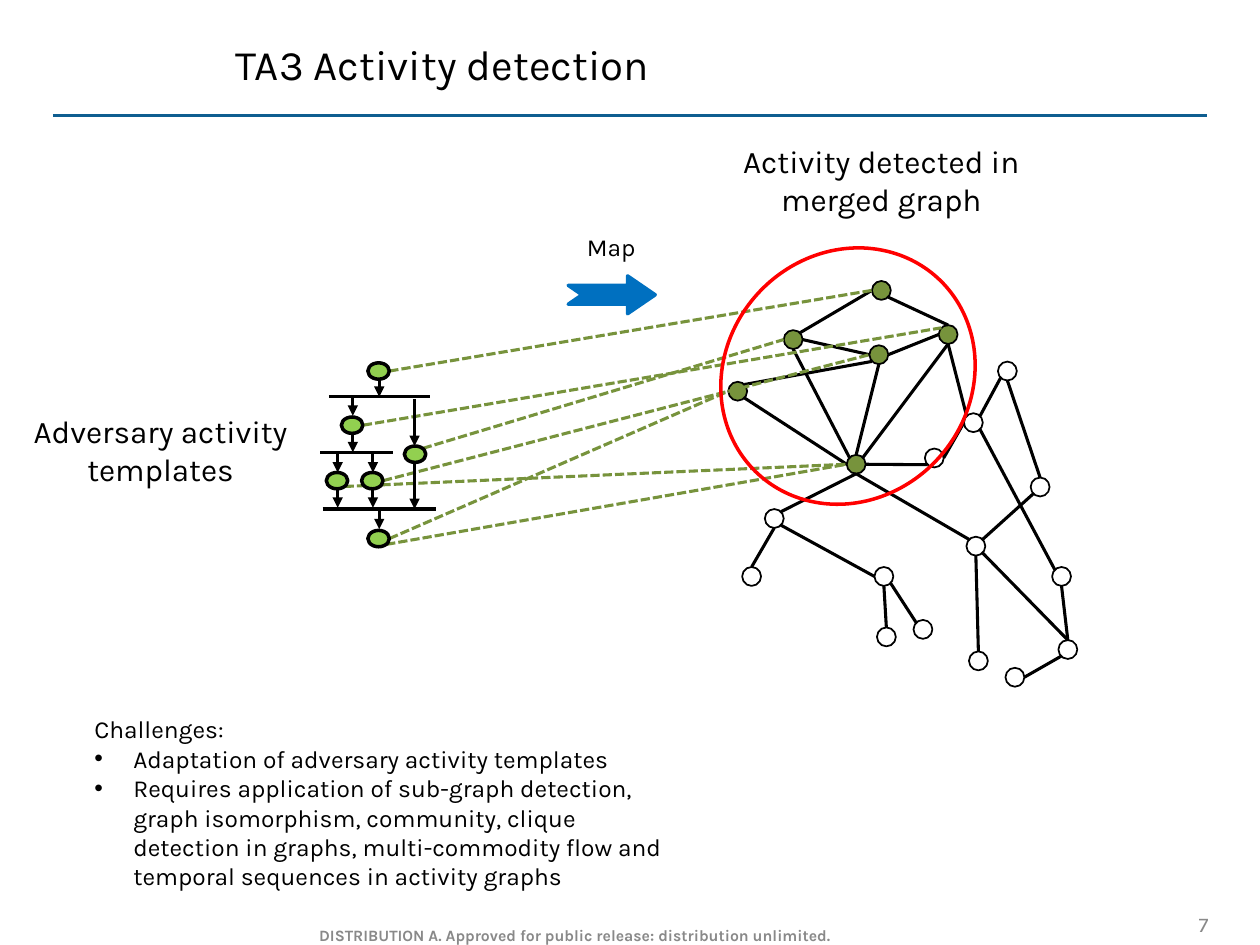
import lxml.etree
import pptx
import pptx.util
from pptx.dml.color import RGBColor
from pptx.enum.dml import MSO_LINE
from pptx.enum.shapes import MSO_CONNECTOR, MSO_SHAPE
from pptx.enum.text import MSO_ANCHOR, PP_ALIGN
from pptx.oxml.ns import qn
from pptx.util import Inches

FONT = "Karla"
BLACK, WHITE, GRAY = "000000", "FFFFFF", "898989"
OLIVE, LIME, RED, BLUE, NAVY = "77933C", "92D050", "FF0000", "0070C0", "0F5E90"

NODE_SIZE = (0.15, 0.15)
STEP_SIZE = (0.17, 0.13)

# Left and top of each node
DETECTED = {
    "top": (6.92, 2.23), "hub": (6.72, 3.61), "middle": (6.9, 2.74),
    "upper left": (6.22, 2.62), "upper right": (7.45, 2.58), "left": (5.78, 3.03),
}
OTHERS = {
    "gate": (7.65, 3.28), "peak": (7.92, 2.87), "east": (8.18, 3.79),
    "inner": (7.34, 3.56), "fork": (7.67, 4.26), "far": (8.35, 4.5),
    "corner": (8.4, 5.08), "west": (6.07, 4.04), "south": (6.94, 4.5),
    "leaf 1": (6.96, 4.98), "leaf 2": (7.25, 4.92), "leaf 3": (7.69, 5.17),
    "leaf 4": (7.98, 5.3), "leaf 5": (5.89, 4.5),
}
STEPS = {
    "end": (2.92, 4.21), "branch": (3.21, 3.54), "task 2": (2.87, 3.75),
    "task 1": (2.59, 3.75), "split": (2.71, 3.31), "start": (2.92, 2.88),
}

# Each edge: node and side, node and side (t, b, l, r and their corners)
GRAPH_EDGES = [
    ("upper left", "r", "middle", "l"), ("middle", "b", "hub", "t"),
    ("upper left", "tr", "top", "l"), ("middle", "r", "upper right", "l"),
    ("upper right", "t", "top", "br"), ("upper right", "b", "gate", "tl"),
    ("peak", "bl", "gate", "tr"), ("peak", "b", "east", "t"),
    ("east", "bl", "fork", "tr"), ("inner", "r", "gate", "l"),
    ("upper left", "b", "hub", "tl"), ("middle", "bl", "left", "tr"),
    ("left", "br", "hub", "l"), ("hub", "b", "west", "tr"),
    ("hub", "b", "fork", "tl"), ("inner", "bl", "hub", "r"),
    ("west", "br", "south", "l"), ("south", "b", "leaf 1", "t"),
    ("south", "br", "leaf 2", "tl"), ("fork", "b", "leaf 3", "t"),
    ("fork", "br", "corner", "t"), ("far", "b", "corner", "t"),
    ("corner", "bl", "leaf 4", "r"), ("gate", "br", "far", "tl"),
    ("upper right", "b", "hub", "tr"), ("west", "b", "leaf 5", "t"),
]
MAPPINGS = [
    ("start", "r", "top", "l"), ("branch", "tr", "upper left", "l"),
    ("end", "br", "hub", "l"), ("end", "r", "left", "l"),
    ("split", "r", "upper right", "tl"), ("task 1", "br", "hub", "l"),
    ("task 2", "r", "middle", "l"),
]
# Bars: left, right, y. Arrows: x, top, bottom.
BARS = [(2.61, 3.41, 3.15), (2.54, 3.12, 3.59), (2.56, 3.46, 4.04)]
ARROWS = [
    (3.01, 3, 3.15), (2.8, 3.15, 3.3), (2.8, 3.44, 3.59), (2.96, 3.6, 3.75),
    (2.68, 3.6, 3.75), (3.29, 3.17, 3.54), (2.96, 3.88, 4.03),
    (2.68, 3.88, 4.03), (3.01, 4.05, 4.2), (3.29, 3.67, 4.04),
]

CHALLENGES = [
    "Adaptation of adversary activity templates",
    "Requires application of sub-graph detection, graph isomorphism, community, "
    "clique detection in graphs, multi-commodity flow and temporal sequences in "
    "activity graphs",
]
LEFT, CENTER, RIGHT = PP_ALIGN.LEFT, PP_ALIGN.CENTER, PP_ALIGN.RIGHT
TOP, MIDDLE, BOTTOM = MSO_ANCHOR.TOP, MSO_ANCHOR.MIDDLE, MSO_ANCHOR.BOTTOM
# Box, paragraphs, size, colour, alignment, anchor, bold
TEXTS = [
    ((0.11, 3.22, 2.33, 0.71), ["Adversary activity templates"], 18, BLACK, CENTER, TOP, False),
    ((5.41, 1.08, 3.17, 0.71), ["Activity detected in merged graph"], 18, BLACK, CENTER, TOP, False),
    ((0.65, 5.62, 4.77, 1.51), ["Challenges:"] + CHALLENGES, 14, BLACK, LEFT, TOP, False),
    ((4.29, 1.79, 1.12, 0.34), ["Map"], 14, BLACK, CENTER, TOP, False),
    ((1.46, 7.19, 6.2, 0.33),
     ["DISTRIBUTION A. Approved for public release: distribution unlimited."],
     9, GRAY, CENTER, BOTTOM, True),
    ((8.86, 7.17, 0.83, 0.32), ["7"], 12, GRAY, RIGHT, MIDDLE, False),
]


def color(value):
    return RGBColor.from_string(value)


def anchor_point(name, side):
    """Return the point on a node's ellipse at the named side or corner."""
    if name in STEPS:
        (left, top), (width, height) = STEPS[name], STEP_SIZE
    else:
        (left, top), (width, height) = (DETECTED | OTHERS)[name], NODE_SIZE
    reach = 0.71 if len(side) == 2 else 1
    across = ("r" in side) - ("l" in side)
    down = ("b" in side) - ("t" in side)
    return (left + width / 2 * (1 + reach * across),
            top + height / 2 * (1 + reach * down))


def add_line(slide, start, end, line_color=BLACK, dashed=False, arrow=False):
    points = [Inches(value) for value in (*start, *end)]
    connector = slide.shapes.add_connector(MSO_CONNECTOR.STRAIGHT, *points)
    connector.line.color.rgb = color(line_color)
    connector.line.width = pptx.util.Pt(1.75)
    if dashed:
        connector.line.dash_style = MSO_LINE.SQUARE_DOT
    if arrow:
        lxml.etree.SubElement(connector.line._get_or_add_ln(), qn("a:tailEnd"), type="triangle")
    lxml.etree.SubElement(connector._element.spPr, qn("a:effectLst"))


def add_shape(slide, kind, box, fill, line_color, line_width):
    shape = slide.shapes.add_shape(kind, *[Inches(value) for value in box])
    shape.shadow.inherit = False
    if fill:
        shape.fill.solid()
        shape.fill.fore_color.rgb = color(fill)
    else:
        shape.fill.background()
    shape.line.color.rgb = color(line_color)
    shape.line.width = pptx.util.Pt(line_width)
    return shape


def add_nodes(slide, nodes, size, fill, line_width):
    for position in nodes.values():
        add_shape(slide, MSO_SHAPE.OVAL, position + size, fill, BLACK, line_width)


def format_paragraph(paragraph, size, text_color, alignment, bold=False):
    paragraph.alignment = alignment
    paragraph.font.name = FONT
    paragraph.font.size = pptx.util.Pt(size)
    paragraph.font.bold = bold
    paragraph.font.color.rgb = color(text_color)


def add_bullet(paragraph):
    properties = paragraph._p.get_or_add_pPr()
    properties.set("marL", str(Inches(0.31)))
    properties.set("indent", str(-Inches(0.31)))
    lxml.etree.SubElement(properties, qn("a:buFont"), typeface="Arial")
    lxml.etree.SubElement(properties, qn("a:buChar"), char="•")


def add_text(slide, box, lines, size, text_color, alignment, anchor, bold):
    frame = slide.shapes.add_textbox(*[Inches(value) for value in box]).text_frame
    frame.word_wrap = True
    frame.vertical_anchor = anchor
    if anchor == BOTTOM:
        frame.margin_bottom = Inches(0.02)
    for index, line in enumerate(lines):
        paragraph = frame.paragraphs[0] if index == 0 else frame.add_paragraph()
        paragraph.text = line
        if index > 0:
            add_bullet(paragraph)
        format_paragraph(paragraph, size, text_color, alignment, bold)


def main():
    presentation = pptx.Presentation()
    presentation.slide_width, presentation.slide_height = Inches(10), Inches(7.5)
    slide = presentation.slides.add_slide(presentation.slide_layouts[5])

    title = slide.shapes.title
    title.left, title.top = Inches(1.77), Inches(0.17)
    title.width, title.height = Inches(7.81), Inches(0.67)
    title.text_frame.text = "TA3 Activity detection"
    title.text_frame.vertical_anchor = MIDDLE
    format_paragraph(title.text_frame.paragraphs[0], 24, BLACK, LEFT)
    add_line(slide, (0.42, 0.92), (9.58, 0.92), NAVY)

    add_nodes(slide, DETECTED, NODE_SIZE, OLIVE, 1)
    add_nodes(slide, OTHERS, NODE_SIZE, WHITE, 1)
    for edges, line_color, dashed in ((GRAPH_EDGES, BLACK, False), (MAPPINGS, OLIVE, True)):
        for first, first_side, second, second_side in edges:
            add_line(slide, anchor_point(first, first_side),
                     anchor_point(second, second_side), line_color, dashed)

    add_nodes(slide, STEPS, STEP_SIZE, LIME, 2)
    for left, right, y in BARS:
        add_line(slide, (left, y), (right, y))
    for x, top, bottom in ARROWS:
        add_line(slide, (x, top), (x, bottom), arrow=True)

    circle = add_shape(slide, MSO_SHAPE.OVAL, (5.76, 1.93, 1.94, 2.11), None, RED, 2)
    circle.rotation = 42.3
    map_arrow = add_shape(slide, MSO_SHAPE.NOTCHED_RIGHT_ARROW,
                          (4.51, 2.19, 0.69, 0.3), BLUE, BLUE, 2)
    map_arrow.adjustments[0], map_arrow.adjustments[1] = 0.5, 0.73

    for text in TEXTS:
        add_text(slide, *text)
    presentation.save("out.pptx")


if __name__ == "__main__":
    main()
